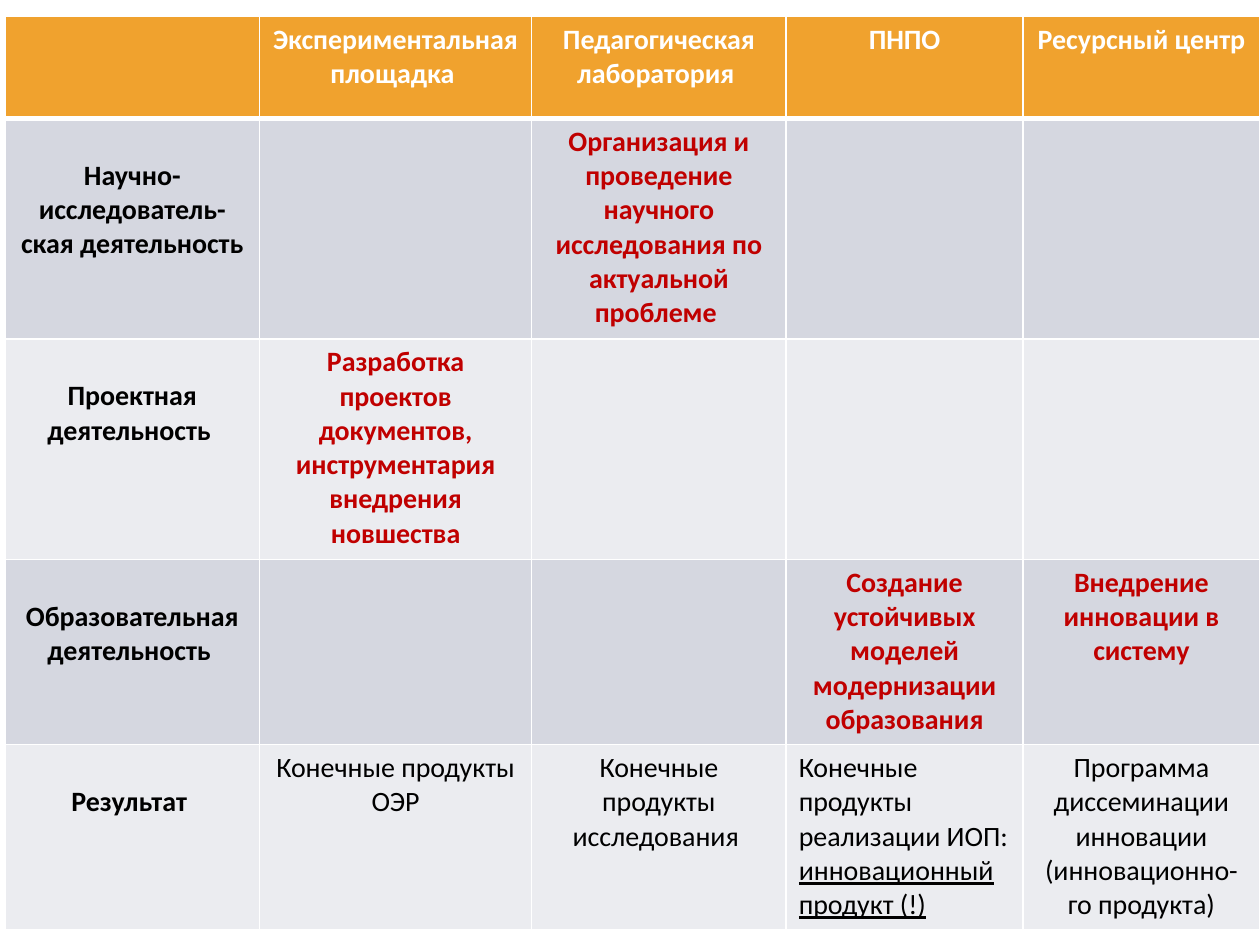
"""Build a slide with a table of activities and results by type of innovation site."""
from dataclasses import dataclass

from lxml.etree import SubElement
from pptx import Presentation
from pptx.dml.color import RGBColor
from pptx.enum.text import PP_ALIGN
from pptx.oxml.ns import qn
from pptx.util import Inches, Pt


@dataclass(frozen=True)
class Theme:
    font: str = "Calibri"
    size: int = 16
    header: str = "F0A22E"
    bands: tuple = ("D5D7E0", "EBECF0")
    light: str = "FFFFFF"
    dark: str = "000000"
    accent: str = "C00000"
    thin: int = 1
    thick: int = 3


THEME = Theme()
HEADERS = ["", "Экспериментальная площадка ", "Педагогическая лаборатория ", "ПНПО", "Ресурсный центр "]
ACTIVITIES = [
    ["Научно-исследователь-ская деятельность", "",
     "Организация и проведение научного исследования по актуальной проблеме ", "", ""],
    ["Проектная деятельность ",
     "Разработка проектов документов, инструментария внедрения новшества", "", "", ""],
    ["Образовательная деятельность ", "", "",
     "Создание устойчивых моделей модернизации образования", "Внедрение инновации в систему"],
]
RESULTS = ["Результат ", "Конечные продукты ОЭР", "Конечные продукты исследования ",
           ("Конечные продукты реализации ИОП: ", "инновационный продукт (!)"),
           "Программа диссеминации инновации (инновационно-го продукта)"]
ROWS = [HEADERS, *ACTIVITIES, RESULTS]
COLUMN_WIDTHS = [2.02, 2.16, 2.02, 1.88, 1.88]
ROW_HEIGHTS = [0.81, 1.75, 1.75, 1.47, 1.47]
LEFT, TOP = 0.04, 0.13
LABEL_MARGIN = 0.32


def add_borders(cell, row):
    widths = {"a:lnL": THEME.thin, "a:lnR": THEME.thin,
              "a:lnT": THEME.thick if row == 1 else THEME.thin,
              "a:lnB": THEME.thick if row == 0 else THEME.thin}
    properties = cell._tc.get_or_add_tcPr()
    for side, width in widths.items():
        line = SubElement(properties, qn(side), w=str(Pt(width)))
        fill = SubElement(line, qn("a:solidFill"))
        SubElement(fill, qn("a:srgbClr"), val=THEME.light)


def text_style(row, column):
    """Return the colour and weight for a cell position."""
    if row == 0:
        return THEME.light, True
    if column == 0:
        return THEME.dark, True
    if ROWS[row] is RESULTS:
        return THEME.dark, False
    return THEME.accent, True


def fill_cell(cell, content, row, column):
    add_borders(cell, row)
    cell.fill.solid()
    background = THEME.bands[(row - 1) % 2] if row else THEME.header
    cell.fill.fore_color.rgb = RGBColor.from_string(background)
    if not content:
        return
    if row and column == 0:
        cell.margin_top = Inches(LABEL_MARGIN)
    runs = (content,) if isinstance(content, str) else content
    paragraph = cell.text_frame.paragraphs[0]
    paragraph.alignment = PP_ALIGN.CENTER if len(runs) == 1 else PP_ALIGN.LEFT
    color, bold = text_style(row, column)
    for index, text in enumerate(runs):
        run = paragraph.add_run()
        run.text = text
        run.font.name = THEME.font
        run.font.size = Pt(THEME.size)
        run.font.bold = bold
        run.font.underline = index > 0
        run.font.color.rgb = RGBColor.from_string(color)


def main():
    presentation = Presentation()
    presentation.slide_width, presentation.slide_height = Inches(10), Inches(7.5)
    slide = presentation.slides.add_slide(presentation.slide_layouts[6])
    table = slide.shapes.add_table(
        len(ROWS), len(HEADERS), Inches(LEFT), Inches(TOP),
        Inches(sum(COLUMN_WIDTHS)), Inches(sum(ROW_HEIGHTS))).table
    for column, width in zip(table.columns, COLUMN_WIDTHS):
        column.width = Inches(width)
    for row, height in zip(table.rows, ROW_HEIGHTS):
        row.height = Inches(height)
    for row, contents in enumerate(ROWS):
        for column, content in enumerate(contents):
            fill_cell(table.cell(row, column), content, row, column)
    presentation.save("out.pptx")


if __name__ == "__main__":
    main()
